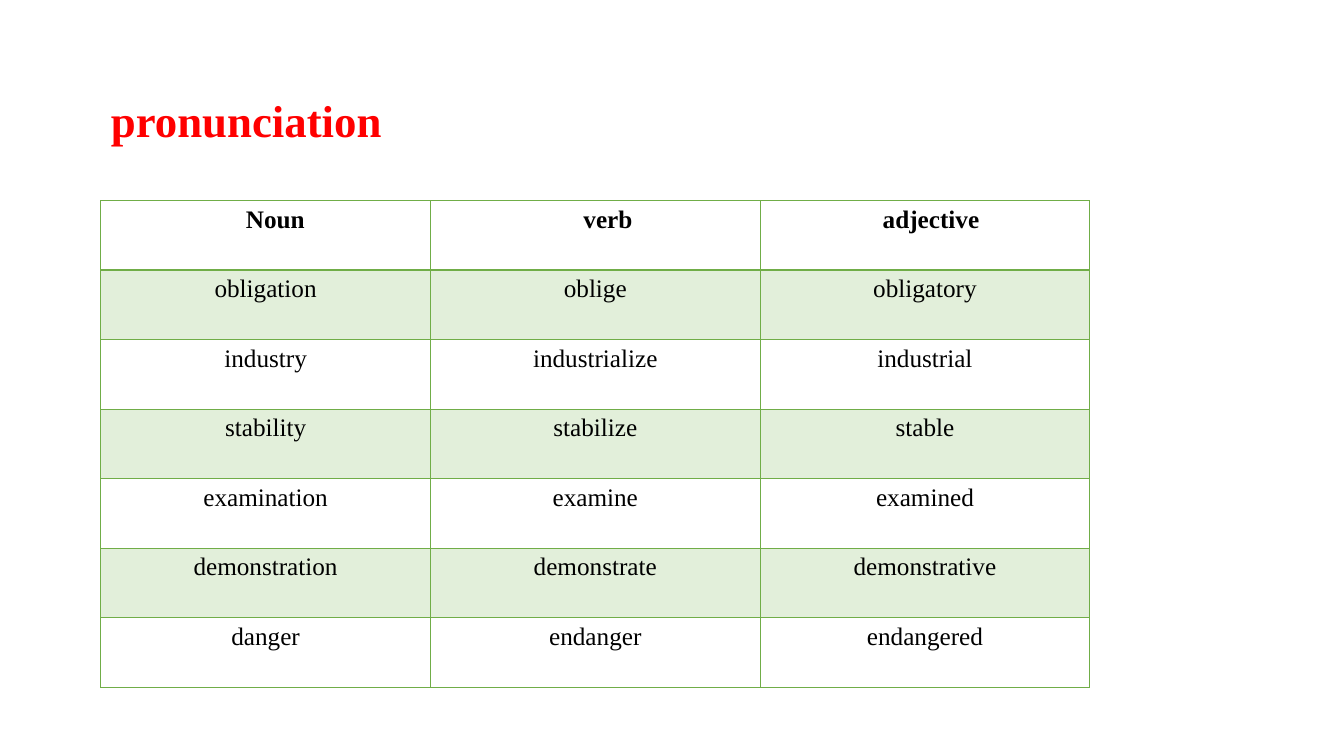
from dataclasses import dataclass

from lxml import etree
from pptx import Presentation
from pptx.dml.color import RGBColor
from pptx.enum.text import MSO_ANCHOR, MSO_AUTO_SIZE, PP_ALIGN
from pptx.oxml.ns import qn
from pptx.slide import Slide
from pptx.table import _Cell
from pptx.text.text import _Paragraph
from pptx.util import Inches, Pt

CENTER, LEFT = PP_ALIGN.CENTER, PP_ALIGN.LEFT
TOP = MSO_ANCHOR.TOP
NO_AUTOFIT = MSO_AUTO_SIZE.NONE

RED = RGBColor(0xFF, 0x00, 0x00)
BLACK = RGBColor(0x00, 0x00, 0x00)
GREEN = RGBColor(0x70, 0xAD, 0x47)
PALE_GREEN = RGBColor(0xE2, 0xEF, 0xDA)

FONT = "Times New Roman"
TITLE_ONLY = 5
LEFT_EDGE = Inches(1)
COLUMN_WIDTH = Inches(3.27)
ROW_HEIGHT = Inches(0.69)
CELL_MARGIN = 0.1


@dataclass(frozen=True)
class Heading:
    text: str
    indent: float  # inches


@dataclass(frozen=True)
class WordFamily:
    noun: str
    verb: str
    adjective: str


HEADINGS = [Heading("Noun", 0.19), Heading("verb", 0.25), Heading("adjective", 0.12)]
WORD_FAMILIES = [
    WordFamily("obligation", "oblige", "obligatory"),
    WordFamily("industry", "industrialize", "industrial"),
    WordFamily("stability", "stabilize", "stable"),
    WordFamily("examination", "examine", "examined"),
    WordFamily("demonstration", "demonstrate", "demonstrative"),
    WordFamily("danger", "endanger", "endangered"),
]


def add_run(paragraph: _Paragraph, text: str, size: int, color: RGBColor, bold: bool) -> None:
    run = paragraph.add_run()
    run.text = text
    run.font.name = FONT
    run.font.size = Pt(size)
    run.font.bold = bold
    run.font.color.rgb = color


def set_borders(cell: _Cell, top: int, bottom: int) -> None:
    """Draw green borders; top and bottom are widths in points."""
    properties = cell._tc.get_or_add_tcPr()
    for side, width in (("L", 1), ("R", 1), ("T", top), ("B", bottom)):
        line = etree.SubElement(properties, qn(f"a:ln{side}"), w=str(Pt(width)))
        fill = etree.SubElement(line, qn("a:solidFill"))
        etree.SubElement(fill, qn("a:srgbClr"), val=str(GREEN))


def fill_cell(cell: _Cell, text: str, row: int, indent: float = 0) -> None:
    is_heading = row == 0
    set_borders(cell, top=2 if row == 1 else 1, bottom=2 if is_heading else 1)
    if row % 2:
        cell.fill.solid()
        cell.fill.fore_color.rgb = PALE_GREEN
    else:
        cell.fill.background()
    cell.margin_left = Inches(CELL_MARGIN + indent)
    cell.vertical_anchor = TOP
    paragraph = cell.text_frame.paragraphs[0]
    paragraph.alignment = CENTER
    add_run(paragraph, text, 18, BLACK, is_heading)


def add_title(slide: Slide) -> None:
    title = slide.shapes.title
    title.left, title.top = LEFT_EDGE, Inches(0.87)
    title.width, title.height = Inches(5.08), Inches(0.64)
    frame = title.text_frame
    frame.word_wrap = True
    frame.auto_size = NO_AUTOFIT
    frame.vertical_anchor = TOP
    paragraph = frame.paragraphs[0]
    paragraph.alignment = LEFT
    add_run(paragraph, "pronunciation", 32, RED, True)


def add_word_table(slide: Slide) -> None:
    row_count, column_count = len(WORD_FAMILIES) + 1, len(HEADINGS)
    table = slide.shapes.add_table(
        row_count, column_count, LEFT_EDGE, Inches(1.99),
        COLUMN_WIDTH * column_count, ROW_HEIGHT * row_count,
    ).table
    table.first_row = False
    table.horz_banding = False
    for column in table.columns:
        column.width = COLUMN_WIDTH
    for row in table.rows:
        row.height = ROW_HEIGHT

    for column_index, heading in enumerate(HEADINGS):
        fill_cell(table.cell(0, column_index), heading.text, 0, heading.indent)
    for row_index, family in enumerate(WORD_FAMILIES, start=1):
        for column_index, word in enumerate((family.noun, family.verb, family.adjective)):
            fill_cell(table.cell(row_index, column_index), word, row_index)


def main() -> None:
    presentation = Presentation()
    presentation.slide_width = Inches(13.33)
    presentation.slide_height = Inches(7.5)
    slide = presentation.slides.add_slide(presentation.slide_layouts[TITLE_ONLY])
    add_word_table(slide)
    add_title(slide)
    presentation.save("out.pptx")


if __name__ == "__main__":
    main()
